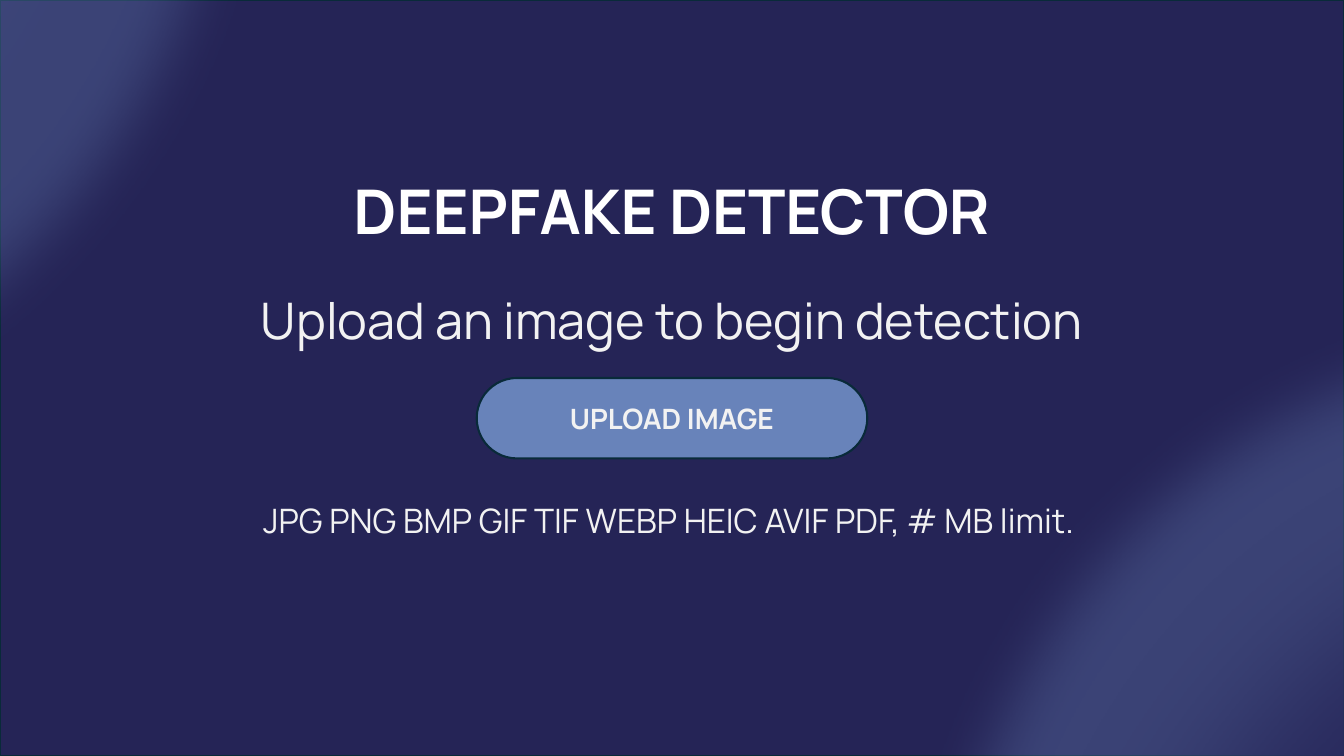
from lxml import etree
from pptx import Presentation
from pptx.dml.color import RGBColor
from pptx.enum.shapes import MSO_SHAPE
from pptx.enum.text import MSO_ANCHOR, PP_ALIGN
from pptx.oxml.ns import qn
from pptx.util import Pt

RECTANGLE = MSO_SHAPE.RECTANGLE
OVAL = MSO_SHAPE.OVAL
PILL = MSO_SHAPE.ROUNDED_RECTANGLE
MIDDLE = MSO_ANCHOR.MIDDLE
CENTER = PP_ALIGN.CENTER

WIDTH, HEIGHT = 960, 540
COLORS = {
    "night": "252456",
    "blue": "6883BA",
    "outline": "092A39",
    "white": "FFFFFF",
    "soft_white": "F2F2F2",
}
FONT = "Manrope"
ORB_SIZE = 836
GLOW_RADIUS, GLOW_OPACITY, SOFT_EDGE = 90, 33, 100
LINE_LEFT, LINE_WIDTH, LINE_HEIGHT = 120, 720, 78


class DetectorSlide:
    def __init__(self, slide):
        self.slide = slide

    def color(self, name):
        return RGBColor.from_string(COLORS[name])

    def fill_text(self, frame, text, size, color, bold=False, spacing=None):
        frame.word_wrap = True
        frame.vertical_anchor = MIDDLE
        paragraph = frame.paragraphs[0]
        paragraph.alignment = CENTER
        paragraph.line_spacing = spacing
        run = paragraph.add_run()
        run.text = text
        run.font.color.rgb = self.color(color)
        for attribute, value in {"name": FONT, "size": Pt(size), "bold": bold}.items():
            setattr(run.font, attribute, value)

    def text_line(self, top, text, size, color="soft_white", bold=False):
        box = self.slide.shapes.add_textbox(
            Pt(LINE_LEFT), Pt(top), Pt(LINE_WIDTH), Pt(LINE_HEIGHT))
        self.fill_text(box.text_frame, text, size, color, bold, spacing=0.9)

    def panel(self, kind, left, top, width, height, fill):
        shape = self.slide.shapes.add_shape(kind, Pt(left), Pt(top), Pt(width), Pt(height))
        shape.shadow.inherit = False
        shape.fill.solid()
        shape.fill.fore_color.rgb = self.color(fill)
        shape.line.color.rgb = self.color("outline")
        shape.line.width = Pt(1.5)
        return shape

    def button(self, left, top, width, height, label):
        pill = self.panel(PILL, left, top, width, height, "blue")
        pill.adjustments[0] = 0.5
        self.fill_text(pill.text_frame, label, 20, "soft_white", bold=True)

    def set_opacity(self, color_element, percent):
        etree.SubElement(color_element, qn("a:alpha"), val=str(percent * 1000))

    def orb(self, left, top, fill, opacity):
        """Draw a translucent circle with a blue glow and a blurred edge."""
        circle = self.panel(OVAL, left, top, ORB_SIZE, ORB_SIZE, fill)
        properties = circle.element.spPr
        self.set_opacity(properties.find(qn("a:solidFill"))[0], opacity)
        effects = properties.find(qn("a:effectLst"))
        glow = etree.SubElement(effects, qn("a:glow"), rad=str(Pt(GLOW_RADIUS)))
        glow_color = etree.SubElement(glow, qn("a:srgbClr"), val=COLORS["blue"])
        self.set_opacity(glow_color, GLOW_OPACITY)
        etree.SubElement(effects, qn("a:softEdge"), rad=str(Pt(SOFT_EDGE)))


def main():
    presentation = Presentation()
    presentation.slide_width, presentation.slide_height = Pt(WIDTH), Pt(HEIGHT)
    page = DetectorSlide(presentation.slides.add_slide(presentation.slide_layouts[6]))

    page.panel(RECTANGLE, 0, 0, WIDTH, HEIGHT, "night")
    page.orb(704, 270, "night", 80)
    page.text_line(114.5, "DEEPFAKE DETECTOR", 44, "white", bold=True)
    page.text_line(192, "Upload an image to begin detection", 36)
    page.button(340.5, 270, 279, 57.5, "UPLOAD IMAGE")
    page.text_line(334, "JPG PNG BMP GIF TIF WEBP HEIC AVIF PDF, # MB limit. ", 24)
    page.orb(-691, -534, "blue", 11)

    presentation.save("out.pptx")


if __name__ == "__main__":
    main()
